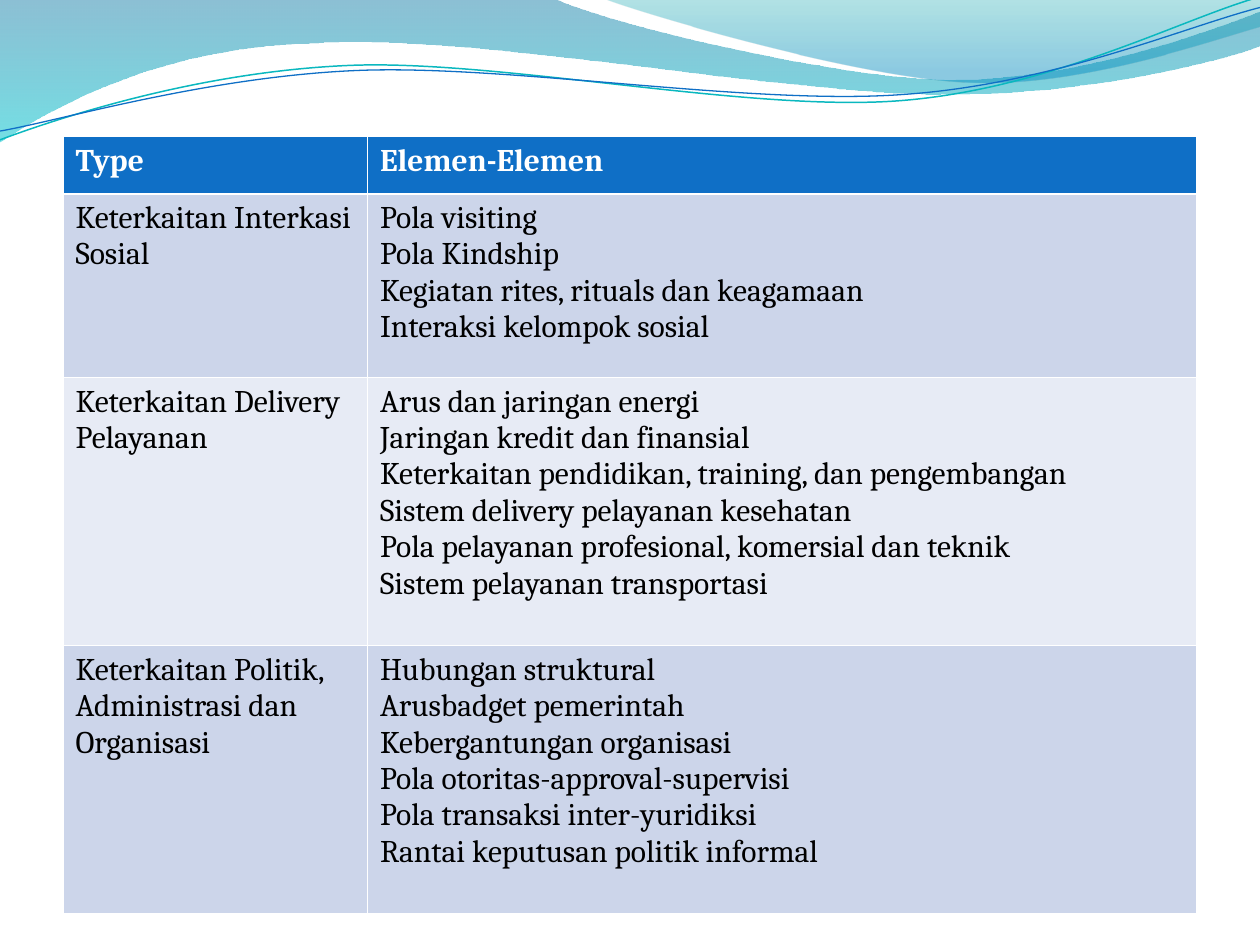
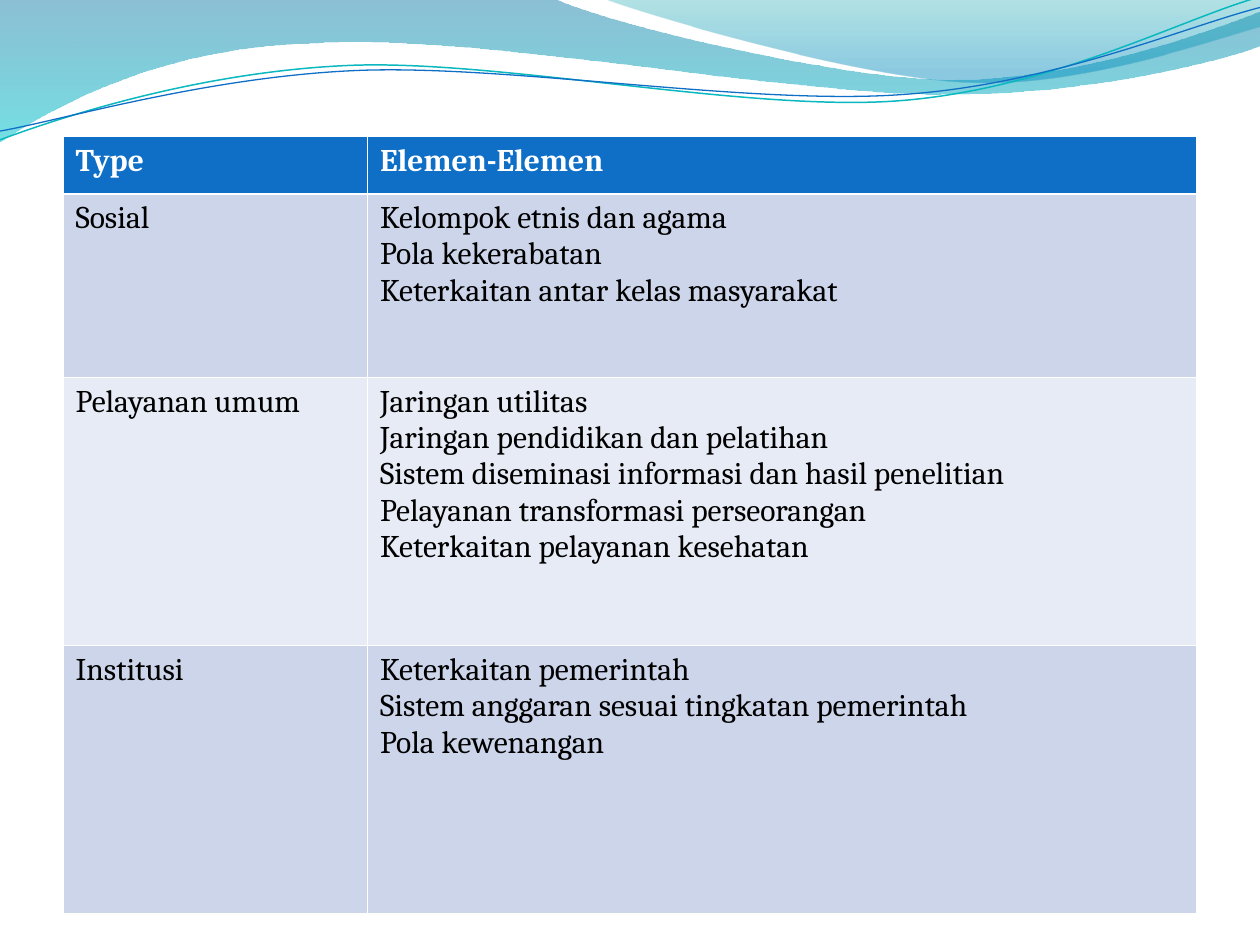
from math import cos, radians, sin

from lxml import etree
from pptx import Presentation
from pptx.dml.color import RGBColor
from pptx.oxml import ns
from pptx.util import Pt

INK = {
    "white": "FFFFFF", "black": "000000", "blue": "0F6FC6", "teal": "0AB8BF",
    "band": "CCD5EA", "pale": "E7EBF5", "deep": "0074A1", "aqua": "00C6CF",
    "sea": "00A1A9", "sky": "008BBF",
}
HEAD = {"size": Pt(18), "name": "Cambria", "bold": True}
BODY = {"size": Pt(18), "name": "Cambria", "bold": False}
TILT = 357.3

WIDE = [
    (0, 0), (316.8, -0.7),
    (342.7, 12.2, 478.1, 45.4, 545.8, 45.4),
    (614.2, 45.4, 689.8, 18.7, 720, 6.5), (720.7, 25.9),
    (707.8, 31.7, 626.4, 54.7, 537.1, 54),
    (447.8, 54, 275, 20.2, 185, 24.5),
    (92.9, 25.9, 33.1, 59.8, -0.7, 81.4), (0, 0),
]
SIDE = [
    (344.9, -0.7),
    (366.5, 7.9, 491, 44.6, 553.7, 46.8),
    (616.3, 49.7, 691.9, 23, 720, 15.1), (720, 0), (344.9, -0.7),
]
UPPER = [
    (0, 79.9),
    (34.6, 67, 113.8, 41, 199.4, 37.4),
    (284.4, 33.8, 427, 64.1, 513.4, 57.6),
    (599.8, 51.1, 675.4, 10.8, 718.6, -1.4),
]
LOWER = [
    (0, 74.9),
    (33.8, 69.1, 118.1, 43.9, 203.8, 40.3),
    (290.2, 36.7, 429.8, 60.5, 516.2, 54),
    (601.9, 48.2, 677.5, 15.1, 720, 4.3),
]

TITLES = ("Type", ["Elemen-Elemen"])
LINKS = [
    ("Keterkaitan Interkasi Sosial", [
        "Pola visiting", "Pola Kindship",
        "Kegiatan rites, rituals dan keagamaan",
        "Interaksi kelompok sosial"]),
    ("Keterkaitan Delivery Pelayanan", [
        "Arus dan jaringan energi", "Jaringan kredit dan finansial",
        "Keterkaitan pendidikan, training, dan pengembangan",
        "Sistem delivery pelayanan kesehatan",
        "Pola pelayanan profesional, komersial dan teknik",
        "Sistem pelayanan transportasi"]),
    ("Keterkaitan Politik, Administrasi dan Organisasi", [
        "Hubungan struktural", "Arusbadget pemerintah",
        "Kebergantungan organisasi", "Pola otoritas-approval-supervisi",
        "Pola transaksi inter-yuridiksi",
        "Rantai keputusan politik informal"]),
]
GROUPS = [
    ("Sosial", [
        "Kelompok etnis dan agama", "Pola kekerabatan",
        "Keterkaitan antar kelas masyarakat"]),
    ("Pelayanan umum", [
        "Jaringan utilitas", "Jaringan pendidikan dan pelatihan",
        "Sistem diseminasi informasi dan hasil penelitian",
        "Pelayanan transformasi perseorangan",
        "Keterkaitan pelayanan kesehatan"]),
    ("Institusi", [
        "Keterkaitan pemerintah",
        "Sistem anggaran sesuai tingkatan pemerintah",
        "Pola kewenangan"]),
]


def tint(name):
    return RGBColor.from_string(INK[name])


def pairs(leg):
    return list(zip(leg[::2], leg[1::2]))


def level(path, hub):
    turn = radians(-TILT)
    flat = []
    for leg in path:
        spots = []
        for x, y in pairs(leg):
            dx, dy = x - hub[0], y - hub[1]
            spots += [hub[0] + dx * cos(turn) - dy * sin(turn),
                      hub[1] + dx * sin(turn) + dy * cos(turn)]
        flat.append(spots)
    return flat


class Deck:
    def __init__(self):
        self.show = Presentation()
        self.show.slide_width, self.show.slide_height = Pt(720), Pt(540)
        self.slide = None

    def page(self):
        self.slide = self.show.slides.add_slide(self.show.slide_layouts[6])
        self.wave(WIDE, [(0, "deep", 45), (1, "aqua", 55)])
        self.wave(SIDE, [(0, "sea", 30), (0.8, "sky", 45)])
        self.curve(UPPER, (359.3, 41.4), "teal", 0.85)
        self.curve(LOWER, (359.6, 42.5), "blue", 0.75)

    def form(self, path, close):
        spots = [(Pt(x), Pt(y)) for leg in path for x, y in pairs(leg)]
        pen = self.slide.shapes.build_freeform(*spots[0])
        pen.add_line_segments(spots[1:], close=close)
        shape = pen.convert_to_shape()
        shape.shadow.inherit = False
        lines = shape.element.iter(ns.qn("a:lnTo"))
        lines = iter(list(lines))
        for leg in path[1:]:
            first = next(lines)
            if len(leg) == 6:
                first.tag = ns.qn("a:cubicBezTo")
                for line in (next(lines), next(lines)):
                    first.append(line[0])
                    line.getparent().remove(line)
        return shape

    def wave(self, path, stops):
        shape = self.form(path, True)
        shape.line.fill.background()
        fill = shape.fill
        fill.gradient()
        fill.gradient_angle = 270
        for stop, (place, name, alpha) in zip(fill.gradient_stops, stops):
            stop.position = place
            stop.color.rgb = tint(name)
        marks = shape.element.iter(ns.qn("a:srgbClr"))
        for mark, (place, name, alpha) in zip(marks, stops):
            etree.SubElement(mark, ns.qn("a:alpha"), val=str(alpha * 1000))

    def curve(self, path, hub, name, width):
        shape = self.form(level(path, hub), False)
        shape.rotation = TILT
        shape.fill.background()
        shape.line.color.rgb = tint(name)
        shape.line.width = Pt(width)

    def cell(self, cell, lines, style, ink, back):
        cell.fill.solid()
        cell.fill.fore_color.rgb = tint(back)
        cell.text = "\n".join(lines)
        for para in cell.text_frame.paragraphs:
            for run in para.runs:
                for key, value in style.items():
                    setattr(run.font, key, value)
                run.font.color.rgb = tint(ink)

    def table(self, items):
        wides, highs = (174, 474), (32.75, 105, 153.25, 153.25)
        grid = self.slide.shapes.add_table(
            len(highs), len(wides), Pt(36), Pt(78),
            Pt(sum(wides)), Pt(sum(highs))).table
        for column, wide in zip(grid.columns, wides):
            column.width = Pt(wide)
        for row, high in zip(grid.rows, highs):
            row.height = Pt(high)
        for r, (kind, parts) in enumerate([TITLES] + items):
            look = ((HEAD, "white", "blue") if r == 0 else
                    (BODY, "black", "band" if r % 2 else "pale"))
            for c, lines in enumerate(([kind], parts)):
                self.cell(grid.cell(r, c), lines, *look)


def main():
    deck = Deck()
    for items in (LINKS, GROUPS):
        deck.page()
        deck.table(items)
    deck.show.save("out.pptx")


if __name__ == "__main__":
    main()
